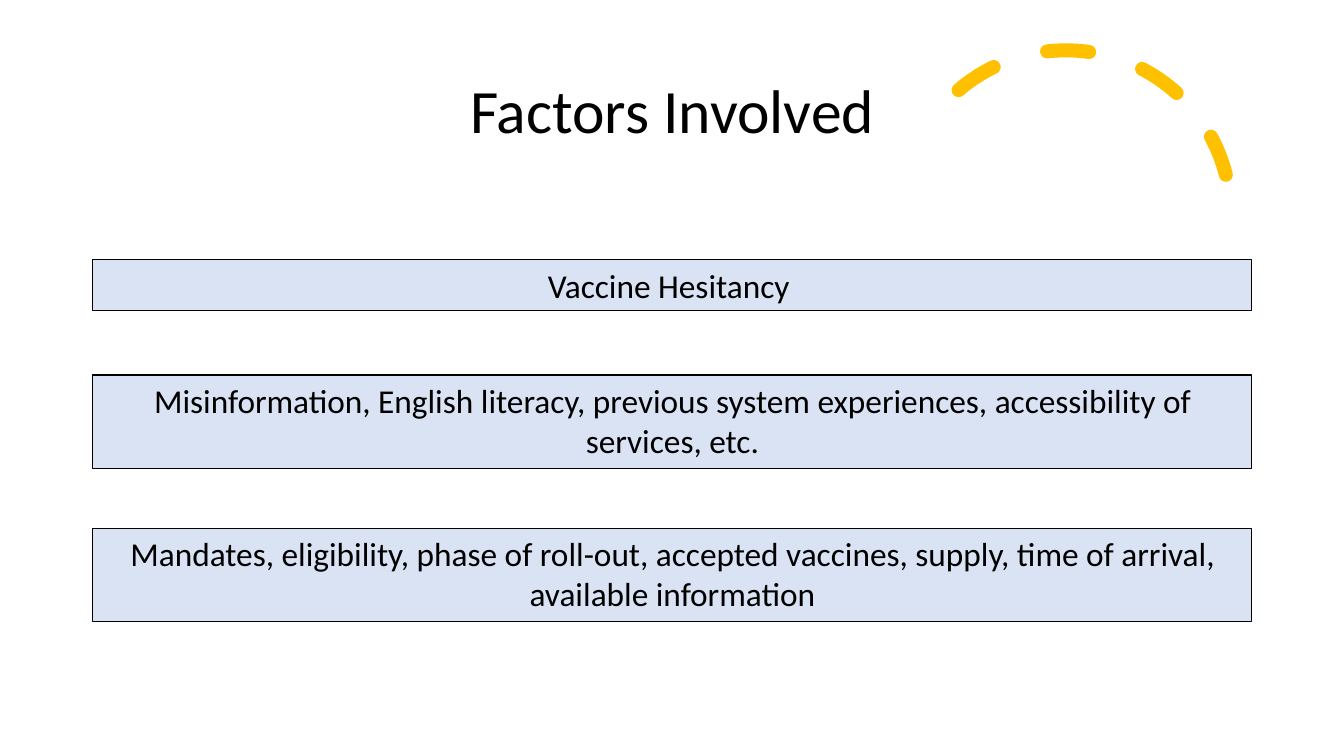
from dataclasses import dataclass

from pptx import Presentation
from pptx.dml.color import RGBColor
from pptx.enum.dml import MSO_LINE
from pptx.enum.shapes import MSO_SHAPE
from pptx.enum.text import MSO_ANCHOR, MSO_AUTO_SIZE, PP_ALIGN
from pptx.util import Cm, Pt

ARC, RECTANGLE = MSO_SHAPE.ARC, MSO_SHAPE.RECTANGLE
DASH = MSO_LINE.DASH
TOP, MIDDLE = MSO_ANCHOR.TOP, MSO_ANCHOR.MIDDLE
FIT_SHAPE = MSO_AUTO_SIZE.SHAPE_TO_FIT_TEXT
CENTER = PP_ALIGN.CENTER


@dataclass(frozen=True)
class Theme:
    font: str = "Calibri"
    ink: RGBColor = RGBColor.from_string("000000")
    panel: RGBColor = RGBColor.from_string("DAE3F3")
    accent: RGBColor = RGBColor.from_string("FFC000")
    title_size: float = 44
    factor_size: float = 23.8
    border: float = 0.75
    arc_width: float = 10


class FactorsPage:
    def __init__(self, page, theme):
        self.page = page
        self.theme = theme

    def add_text(self, box, text, size, anchor):
        frame = box.text_frame
        frame.word_wrap = True
        frame.vertical_anchor = anchor
        para = frame.paragraphs[0]
        para.alignment = CENTER
        span = para.add_run()
        span.text = text
        span.font.name = self.theme.font
        span.font.size = Pt(size)
        span.font.color.rgb = self.theme.ink
        return para

    def title(self, text, left, top, width, height):
        box = self.page.shapes.add_textbox(Cm(left), Cm(top), Cm(width), Cm(height))
        para = self.add_text(box, text, self.theme.title_size, MIDDLE)
        para.line_spacing = 0.9

    def factor(self, text, left, top, width, height):
        box = self.page.shapes.add_shape(RECTANGLE, Cm(left), Cm(top), Cm(width), Cm(height))
        box.shadow.inherit = False
        box.fill.solid()
        box.fill.fore_color.rgb = self.theme.panel
        box.line.color.rgb = self.theme.ink
        box.line.width = Pt(self.theme.border)
        para = self.add_text(box, text, self.theme.factor_size, TOP)
        para.space_after = Pt(6)
        box.text_frame.auto_size = FIT_SHAPE

    def dashed_arc(self, left, top, size, start, end, rotation):
        """Draw a round-capped arc; start and end are in the preset's own units."""
        arc = self.page.shapes.add_shape(ARC, Cm(left), Cm(top), Cm(size), Cm(size))
        arc.shadow.inherit = False
        arc.adjustments[0] = start
        arc.adjustments[1] = end
        arc.rotation = rotation
        arc.fill.background()
        arc.line.color.rgb = self.theme.accent
        arc.line.width = Pt(self.theme.arc_width)
        arc.line.dash_style = DASH
        outline = arc.line.fill._xPr
        outline.set("cap", "rnd")


LEFT, WIDTH = 2.34, 29.21
FACTORS = [
    (6.55, 1.27, "Vaccine Hesitancy "),
    (9.45, 2.36, "Misinformation, English literacy, previous system experiences, "
                 "accessibility of services, etc."),
    (13.31, 2.36, "Mandates, eligibility, phase of roll-out, accepted vaccines, supply, "
                  "time of arrival, available information"),
]


def main():
    deck = Presentation()
    deck.slide_width, deck.slide_height = Cm(33.87), Cm(19.05)
    page = FactorsPage(deck.slides.add_slide(deck.slide_layouts[6]), Theme())
    page.dashed_arc(22.71, 1.27, 8.31, start=146.13, end=0, rotation=345.8)
    page.title("Factors Involved", LEFT, 1.02, WIDTH, 3.68)
    for top, height, text in FACTORS:
        page.factor(text, LEFT, top, WIDTH, height)
    deck.save("out.pptx")


if __name__ == "__main__":
    main()
